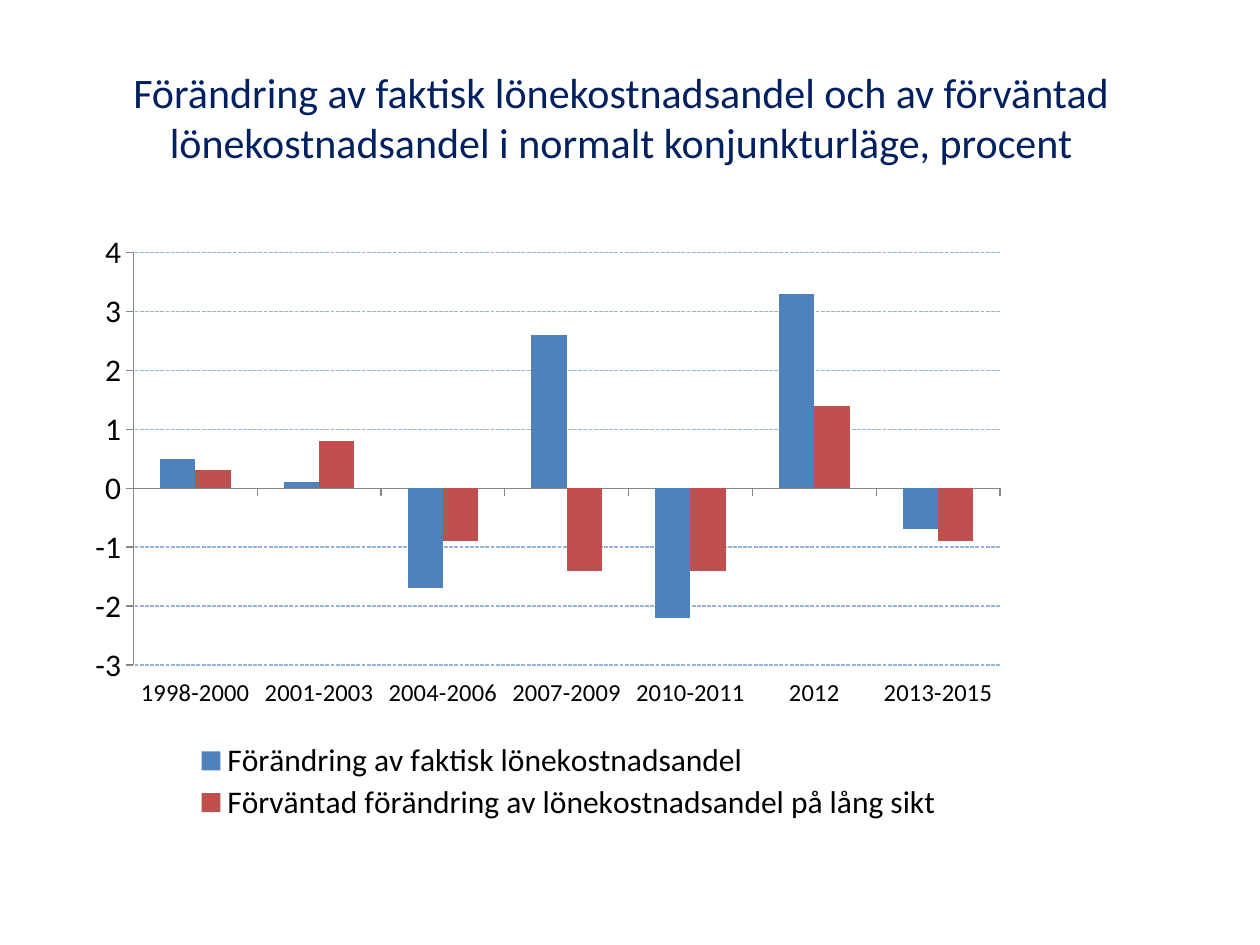
from dataclasses import dataclass

from lxml.etree import SubElement
from pptx import Presentation
from pptx.chart.data import CategoryChartData
from pptx.dml.color import RGBColor
from pptx.enum.chart import XL_CHART_TYPE, XL_LEGEND_POSITION, XL_TICK_LABEL_POSITION, XL_TICK_MARK
from pptx.enum.dml import MSO_LINE
from pptx.enum.text import MSO_ANCHOR, PP_ALIGN
from pptx.oxml import parse_xml
from pptx.oxml.ns import nsdecls, qn
from pptx.util import Inches, Pt


@dataclass(frozen=True)
class Theme:
    """Colours, font and type sizes of the slide."""
    font: str = "Calibri"
    title: str = "002060"
    text: str = "000000"
    axis: str = "868686"
    grid: str = "95B3D7"
    actual: str = "4F81BD"
    expected: str = "C0504D"
    title_size: int = 24
    chart_size: int = 18
    category_size: int = 14


THEME = Theme()
TITLE = ("Förändring av faktisk lönekostnadsandel och av förväntad "
         "lönekostnadsandel i normalt konjunkturläge, procent")
PERIODS = ["1998-2000", "2001-2003", "2004-2006", "2007-2009", "2010-2011", "2012", "2013-2015"]
SERIES = [
    ("Förändring av faktisk lönekostnadsandel",
     [0.5, 0.1, -1.7, 2.6, -2.2, 3.3, -0.7], THEME.actual),
    ("Förväntad förändring av lönekostnadsandel på lång sikt",
     [0.3, 0.8, -0.9, -1.4, -1.4, 1.4, -0.9], THEME.expected),
]


def style_font(font, size, color):
    """Set the typeface, size and colour of a font."""
    font.name = THEME.font
    font.size = Pt(size)
    font.color.rgb = RGBColor.from_string(color)


def write_text(frame, text, *, size, color, align=PP_ALIGN.CENTER, anchor=MSO_ANCHOR.MIDDLE):
    """Write one formatted paragraph in a text frame."""
    frame.word_wrap = True
    frame.vertical_anchor = anchor
    para = frame.paragraphs[0]
    para.alignment = align
    span = para.add_run()
    span.text = text
    style_font(span.font, size, color)


def make_layout(left, top, width, height, inner=False):
    """Return a manual chart layout given as fractions of the chart."""
    layout = parse_xml(f"<c:layout {nsdecls('c')}><c:manualLayout/></c:layout>")
    settings = {"layoutTarget": "inner"} if inner else {}
    settings.update(xMode="edge", yMode="edge", x=left, y=top, w=width, h=height)
    for name, value in settings.items():
        SubElement(layout[0], qn(f"c:{name}")).set("val", str(value))
    return layout


def clear_layout(element):
    """Remove any layout that a chart element already has."""
    for layout in element.findall(qn("c:layout")):
        element.remove(layout)


def format_axes(chart):
    """Format the category and value axes with their gridlines."""
    for axis, size in ((chart.category_axis, THEME.category_size),
                       (chart.value_axis, THEME.chart_size)):
        style_font(axis.tick_labels.font, size, THEME.text)
        axis.major_tick_mark = XL_TICK_MARK.OUTSIDE
        axis.minor_tick_mark = XL_TICK_MARK.NONE
        axis.format.line.color.rgb = RGBColor.from_string(THEME.axis)
        axis.format.line.width = Pt(0.75)
    chart.category_axis.tick_label_position = XL_TICK_LABEL_POSITION.LOW
    values = chart.value_axis
    values.minimum_scale, values.maximum_scale, values.major_unit = -3, 4, 1
    values.tick_labels.number_format = "0"
    values.tick_labels.number_format_is_linked = False
    values.has_major_gridlines = True
    grid = values.major_gridlines.format.line
    grid.color.rgb = RGBColor.from_string(THEME.grid)
    grid.width = Pt(0.75)
    grid.dash_style = MSO_LINE.SQUARE_DOT


def format_legend(chart):
    """Place the legend below the plot."""
    chart.has_legend = True
    legend = chart.legend
    legend.position = XL_LEGEND_POSITION.RIGHT
    legend.include_in_layout = False
    style_font(legend.font, THEME.chart_size, THEME.text)
    element = legend._element
    clear_layout(element)
    element.find(qn("c:legendPos")).addnext(make_layout(0.12, 0.83, 0.78, 0.14))


def add_title(page, box):
    """Place the title placeholder in its box."""
    title = page.shapes.title
    title.left, title.top, title.width, title.height = box
    write_text(title.text_frame, TITLE, size=THEME.title_size, color=THEME.title)


def add_cost_share_chart(page, box):
    """Add the clustered columns of actual and expected change."""
    data = CategoryChartData()
    data.categories = PERIODS
    for name, values, _ in SERIES:
        data.add_series(name, values)
    chart = page.shapes.add_chart(XL_CHART_TYPE.COLUMN_CLUSTERED, *box, data).chart
    chart.has_title = False
    style_font(chart.font, THEME.chart_size, THEME.text)
    plot = chart.plots[0]
    plot.gap_width = 150
    plot.overlap = 0
    plot.vary_by_categories = False
    for series, (_, _, color) in zip(plot.series, SERIES):
        series.invert_if_negative = False
        series.format.fill.solid()
        series.format.fill.fore_color.rgb = RGBColor.from_string(color)
    format_axes(chart)
    format_legend(chart)
    plot_area = chart._chartSpace.find(f".//{qn('c:plotArea')}")
    clear_layout(plot_area)
    plot_area.insert(0, make_layout(0.071, 0.051, 0.874, 0.662, inner=True))


def main():
    """Build the slide and save it."""
    deck = Presentation()
    deck.slide_width, deck.slide_height = Inches(10), Inches(7.5)
    page = deck.slides.add_slide(deck.slide_layouts[5])
    add_title(page, (Inches(0.43), Inches(0.3), Inches(9), Inches(1.25)))
    add_cost_share_chart(page, (Inches(0.5), Inches(1.75), Inches(7.87), Inches(4.95)))
    deck.save("out.pptx")


if __name__ == "__main__":
    main()
